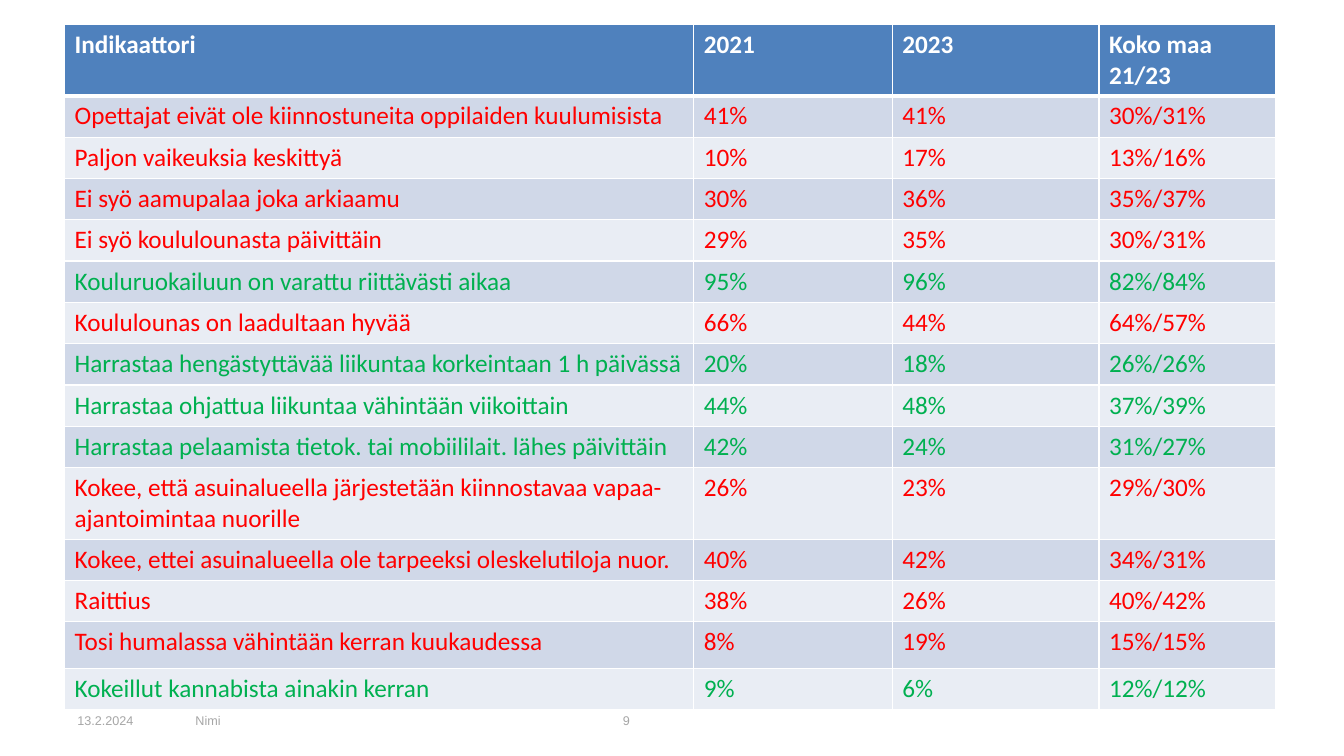
from dataclasses import dataclass

from lxml.etree import SubElement
from pptx import Presentation
from pptx.dml.color import RGBColor
from pptx.enum.text import MSO_ANCHOR
from pptx.oxml import parse_xml
from pptx.oxml.ns import nsdecls, qn
from pptx.slide import Slide
from pptx.table import _Cell
from pptx.text.text import _Paragraph
from pptx.util import Inches, Length, Pt


@dataclass(frozen=True)
class Theme:
    header: str = "4F81BD"
    bands: tuple[str, str] = ("D0D8E8", "E9EDF4")
    white: str = "FFFFFF"
    worse: str = "FF0000"
    better: str = "00B050"
    muted: str = "A6A6A6"
    table_font: str = "Calibri"
    footer_font: str = "Arial"
    table_size: int = 18
    footer_size: int = 9
    thin: float = 1
    thick: float = 3


@dataclass(frozen=True)
class Indicator:
    name: str
    year_2021: str
    year_2023: str
    country: str
    color: str

    def values(self) -> tuple[str, ...]:
        return self.name, self.year_2021, self.year_2023, self.country


@dataclass(frozen=True)
class FooterItem:
    text: str
    left: float
    width: float


THEME = Theme()
RED, GREEN = THEME.worse, THEME.better
GRID_STEP = 0.1  # inches per grid column and row

COLUMN_WIDTHS = (62.4, 19.7, 20.5, 17.5)
TABLE_LEFT, TABLE_TOP = 6.4, 2.4
ROW_HEIGHT = 4.1
TALL_ROW, TALL_ROW_HEIGHT = 13, 4.6
FOOTER_TOP, FOOTER_HEIGHT = 69.5, 4

INDICATORS = (
    Indicator("Indikaattori", "2021", "2023", "Koko maa 21/23", THEME.white),
    Indicator("Opettajat eivät ole kiinnostuneita oppilaiden kuulumisista",
              "41%", "41%", "30%/31%", RED),
    Indicator("Paljon vaikeuksia keskittyä", "10%", "17%", "13%/16%", RED),
    Indicator("Ei syö aamupalaa joka arkiaamu", "30%", "36%", "35%/37%", RED),
    Indicator("Ei syö koululounasta päivittäin", "29%", "35%", "30%/31%", RED),
    Indicator("Kouluruokailuun on varattu riittävästi aikaa",
              "95%", "96%", "82%/84%", GREEN),
    Indicator("Koululounas on laadultaan hyvää", "66%", "44%", "64%/57%", RED),
    Indicator("Harrastaa hengästyttävää liikuntaa korkeintaan 1 h päivässä",
              "20%", "18%", "26%/26%", GREEN),
    Indicator("Harrastaa ohjattua liikuntaa vähintään viikoittain",
              "44%", "48%", "37%/39%", GREEN),
    Indicator("Harrastaa pelaamista tietok. tai mobiililait. lähes päivittäin",
              "42%", "24%", "31%/27%", GREEN),
    Indicator("Kokee, että asuinalueella järjestetään kiinnostavaa "
              "vapaa-ajantoimintaa nuorille", "26%", "23%", "29%/30%", RED),
    Indicator("Kokee, ettei asuinalueella ole tarpeeksi oleskelutiloja nuor.",
              "40%", "42%", "34%/31%", RED),
    Indicator("Raittius", "38%", "26%", "40%/42%", RED),
    Indicator("Tosi humalassa vähintään kerran kuukaudessa",
              "8%", "19%", "15%/15%", RED),
    Indicator("Kokeillut kannabista ainakin kerran", "9%", "6%", "12%/12%", GREEN),
)

FOOTER = (
    FooterItem("13.2.2024", 6.7, 11.7),
    FooterItem("Nimi", 18.4, 42.2),
    FooterItem("9", 60.8, 31.1),
)


def grid(steps: float) -> Length:
    return Inches(steps * GRID_STEP)


def add_run(paragraph: _Paragraph, text: str, font: str, size: int,
            color: str, bold: bool = False) -> None:
    run = paragraph.add_run()
    run.text = text
    run.font.name = font
    run.font.size = Pt(size)
    run.font.bold = bold
    run.font.color.rgb = RGBColor.from_string(color)


def set_borders(cell: _Cell, top: float, bottom: float) -> None:
    """Draw white cell borders; widths are in points."""
    widths = {"lnL": THEME.thin, "lnR": THEME.thin, "lnT": top, "lnB": bottom}
    properties = cell._tc.get_or_add_tcPr()
    for position, (side, width) in enumerate(widths.items()):
        line = parse_xml(f'<a:{side} {nsdecls("a")} w="{Pt(width)}"/>')
        fill = SubElement(line, qn("a:solidFill"))
        SubElement(fill, qn("a:srgbClr"), val=THEME.white)
        properties.insert(position, line)


def add_indicator_table(slide: Slide) -> None:
    heights = [TALL_ROW_HEIGHT if row == TALL_ROW else ROW_HEIGHT
               for row in range(len(INDICATORS))]
    table = slide.shapes.add_table(
        len(INDICATORS), len(COLUMN_WIDTHS), grid(TABLE_LEFT), grid(TABLE_TOP),
        grid(sum(COLUMN_WIDTHS)), grid(sum(heights))).table
    for column, width in zip(table.columns, COLUMN_WIDTHS):
        column.width = grid(width)
    for row, (indicator, height) in enumerate(zip(INDICATORS, heights)):
        table.rows[row].height = grid(height)
        is_header = row == 0
        background = THEME.header if is_header else THEME.bands[(row - 1) % 2]
        for column, value in enumerate(indicator.values()):
            cell = table.cell(row, column)
            cell.fill.solid()
            cell.fill.fore_color.rgb = RGBColor.from_string(background)
            set_borders(cell, top=THEME.thick if row == 1 else THEME.thin,
                        bottom=THEME.thick if is_header else THEME.thin)
            add_run(cell.text_frame.paragraphs[0], value, THEME.table_font,
                    THEME.table_size, indicator.color, bold=is_header)


def add_footer_item(slide: Slide, item: FooterItem) -> None:
    frame = slide.shapes.add_textbox(
        grid(item.left), grid(FOOTER_TOP),
        grid(item.width), grid(FOOTER_HEIGHT)).text_frame
    frame.word_wrap = True
    frame.vertical_anchor = MSO_ANCHOR.MIDDLE
    add_run(frame.paragraphs[0], item.text, THEME.footer_font,
            THEME.footer_size, THEME.muted)


def main() -> None:
    presentation = Presentation()
    presentation.slide_width = Inches(13.33)
    presentation.slide_height = Inches(7.5)
    slide = presentation.slides.add_slide(presentation.slide_layouts[6])

    # Indicator comparison
    add_indicator_table(slide)

    # Date, name and page number
    for item in FOOTER:
        add_footer_item(slide, item)

    presentation.save("out.pptx")


if __name__ == "__main__":
    main()
